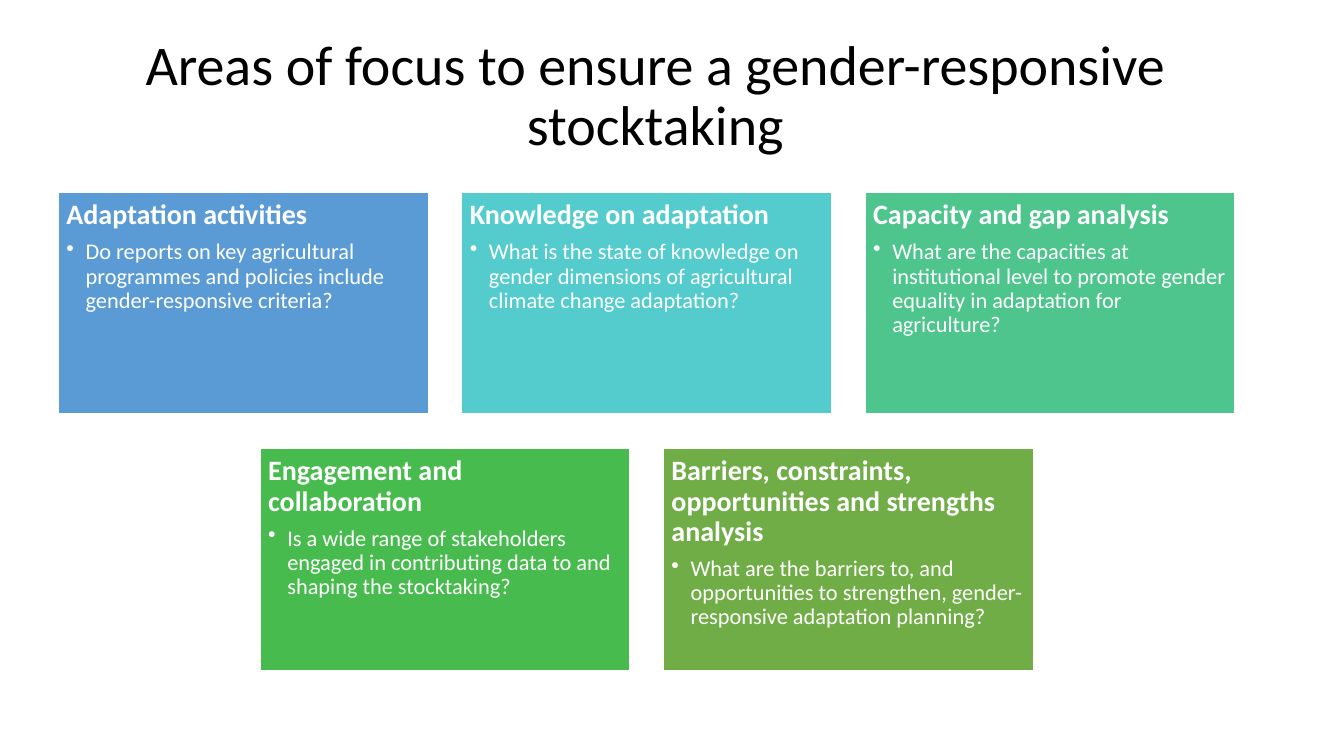
"""Build a slide of five focus areas for a gender-responsive stocktaking."""
import pptx
import pptx.dml.color
import pptx.enum.shapes
import pptx.enum.text
import pptx.oxml
import pptx.oxml.ns
import pptx.util
from pptx.util import Inches

RGBColor = pptx.dml.color.RGBColor
PP_ALIGN = pptx.enum.text.PP_ALIGN
MSO_ANCHOR = pptx.enum.text.MSO_ANCHOR

BLACK = RGBColor(0x00, 0x00, 0x00)
WHITE = RGBColor(0xFF, 0xFF, 0xFF)
BLUE = RGBColor(0x5B, 0x9B, 0xD5)
TURQUOISE = RGBColor(0x54, 0xCC, 0xCD)
MINT = RGBColor(0x4D, 0xC5, 0x8D)
GREEN = RGBColor(0x48, 0xBB, 0x4F)
OLIVE = RGBColor(0x70, 0xAD, 0x47)

FONT = "Calibri"
CARD_W, CARD_H = 3.67, 2.2
PITCH_X, PITCH_Y = 4, 2.54
GRID_LEFT, GRID_TOP, COLUMNS = 0.58, 1.91, 3

AREAS = [
    (BLUE, "Adaptation activities",
     "Do reports on key agricultural programmes and policies include "
     "gender-responsive criteria?"),
    (TURQUOISE, "Knowledge on adaptation",
     "What is the state of knowledge on gender dimensions of agricultural "
     "climate change adaptation?"),
    (MINT, "Capacity and gap analysis",
     "What are the capacities at institutional level to promote gender "
     "equality in adaptation for agriculture?"),
    (GREEN, "Engagement and collaboration",
     "Is a wide range of stakeholders engaged in contributing data to and "
     "shaping the stocktaking?"),
    (OLIVE, "Barriers, constraints, opportunities and strengths analysis",
     "What are the barriers to, and opportunities to strengthen, "
     "gender-responsive adaptation planning?"),
]


def write(p, text, size, color, align=PP_ALIGN.LEFT, bold=False, after=0):
    """Fill a paragraph and set its format."""
    p.text = text
    p.alignment = align
    p.line_spacing = 0.9
    p.space_after = pptx.util.Pt(after)
    p.font.name = FONT
    p.font.size = pptx.util.Pt(size)
    p.font.bold = bold
    p.font.color.rgb = color


def add_bullet(p, indent):
    """Give a paragraph a round bullet with a hanging indent."""
    pPr = p._p.get_or_add_pPr()
    pPr.set("marL", str(Inches(indent)))
    pPr.set("indent", str(-Inches(indent)))
    bullet = pptx.oxml.parse_xml(
        f'<a:buChar {pptx.oxml.ns.nsdecls("a")} char="\u2022"/>')
    pPr.insert_element_before(bullet, "a:tabLst", "a:defRPr", "a:extLst")


def add_title(s, text):
    """Add the centred slide title."""
    sp = s.shapes.add_textbox(
        Inches(0.75), Inches(0.24), Inches(11.5), Inches(1.45))
    tf = sp.text_frame
    tf.word_wrap = True
    tf.vertical_anchor = MSO_ANCHOR.MIDDLE
    write(tf.paragraphs[0], text, 40, BLACK, PP_ALIGN.CENTER)


def add_card(s, left, top, color, heading, question):
    """Add a coloured card with a heading and a bulleted question."""
    sp = s.shapes.add_shape(
        pptx.enum.shapes.MSO_SHAPE.RECTANGLE,
        Inches(left), Inches(top), Inches(CARD_W), Inches(CARD_H))
    sp.shadow.inherit = False
    sp.fill.solid()
    sp.fill.fore_color.rgb = color
    sp.line.color.rgb = WHITE
    sp.line.width = pptx.util.Pt(1)
    tf = sp.text_frame
    tf.word_wrap = True
    tf.vertical_anchor = MSO_ANCHOR.TOP
    tf.margin_left = tf.margin_right = Inches(0.08)
    tf.margin_top = tf.margin_bottom = Inches(0.08)
    write(tf.paragraphs[0], heading, 20, WHITE, bold=True, after=7)
    p = tf.add_paragraph()
    p.level = 1
    write(p, question, 16, WHITE, after=2.4)
    add_bullet(p, 0.19)


def add_cards(s, areas):
    """Lay the cards out in rows, centring a row that is not full."""
    for i, area in enumerate(areas):
        row, col = divmod(i, COLUMNS)
        in_row = min(COLUMNS, len(areas) - row * COLUMNS)
        left = GRID_LEFT + (col + (COLUMNS - in_row) / 2) * PITCH_X
        add_card(s, left, GRID_TOP + row * PITCH_Y, *area)


def main():
    """Create the presentation and save it."""
    prs = pptx.Presentation()
    prs.slide_width = Inches(13.33)
    prs.slide_height = Inches(7.5)
    s = prs.slides.add_slide(prs.slide_layouts[6])
    add_title(s, "Areas of focus to ensure a gender-responsive stocktaking")
    add_cards(s, AREAS)
    prs.save("out.pptx")


main()
